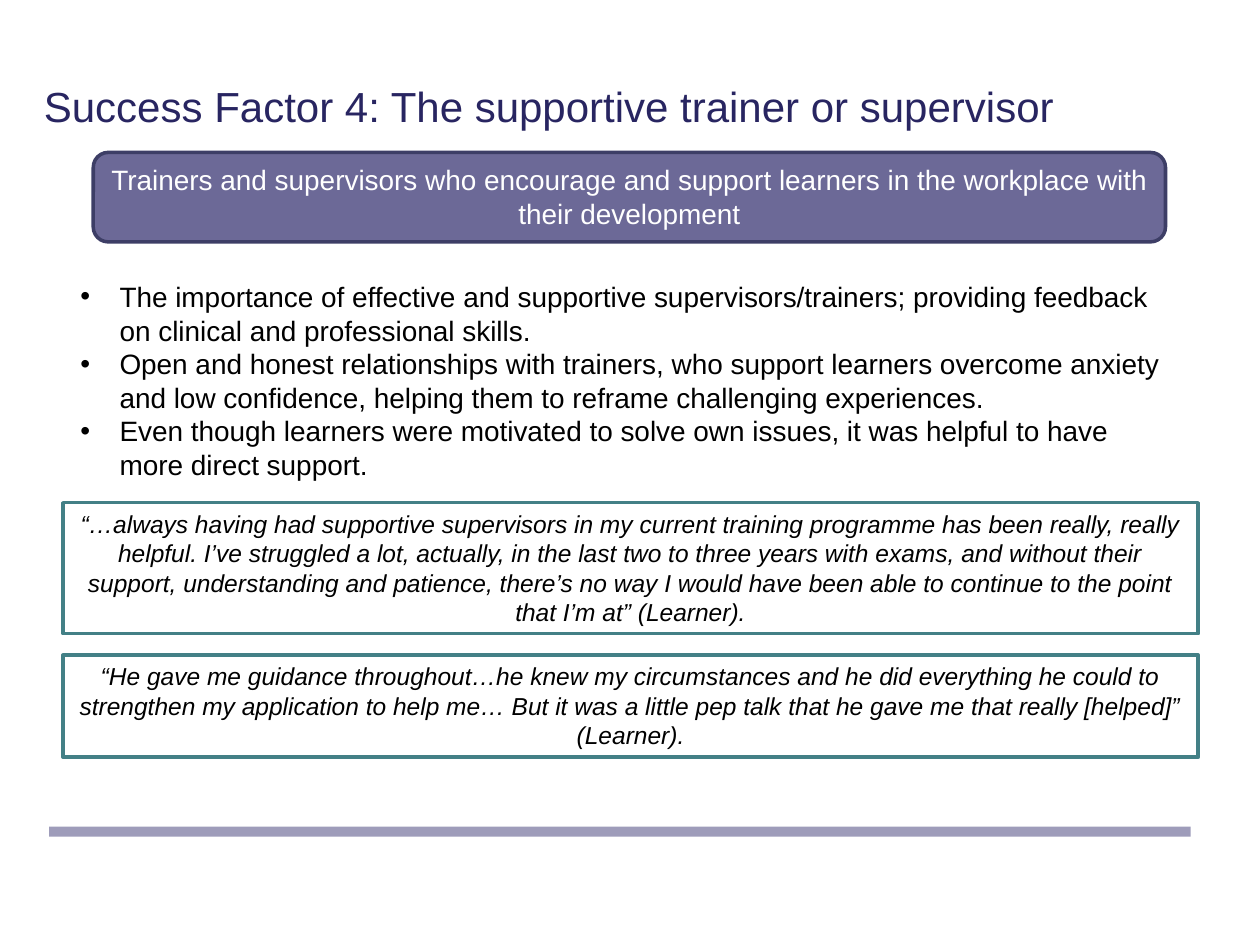
from lxml import etree
from pptx import Presentation
from pptx.dml.color import RGBColor
from pptx.enum.shapes import MSO_SHAPE
from pptx.enum.text import MSO_ANCHOR, PP_ALIGN
from pptx.oxml.ns import qn
from pptx.util import Inches, Pt

RECT, ROUND = MSO_SHAPE.RECTANGLE, MSO_SHAPE.ROUNDED_RECTANGLE
TOP, MIDDLE = MSO_ANCHOR.TOP, MSO_ANCHOR.MIDDLE
LEFT, CENTER = PP_ALIGN.LEFT, PP_ALIGN.CENTER

WHITE = RGBColor(0xFF, 0xFF, 0xFF)
BLACK = RGBColor(0x00, 0x00, 0x00)
NAVY = RGBColor(0x28, 0x25, 0x61)
PURPLE = RGBColor(0x6C, 0x69, 0x97)
DARK = RGBColor(0x3D, 0x3E, 0x66)
LILAC = RGBColor(0x9E, 0x9C, 0xBA)
TEAL = RGBColor(0x43, 0x80, 0x86)

TITLE = "Success Factor 4: The supportive trainer or supervisor"
BANNER = ("Trainers and supervisors who encourage and support learners "
          "in the workplace with their development")
POINTS = [
    "The importance of effective and supportive supervisors/trainers; "
    "providing feedback on clinical and professional skills.",
    "Open and honest relationships with trainers, who support learners overcome "
    "anxiety and low confidence, helping them to reframe challenging experiences.",
    "Even though learners were motivated to solve own issues, it was helpful "
    "to have more direct support.",
]
QUOTES = [
    (3.99, 1.04,
     "“…always having had supportive supervisors in my current training programme "
     "has been really, really helpful. I’ve struggled a lot, actually, in the last "
     "two to three years with exams, and without their support, understanding and "
     "patience, there’s no way I would have been able to continue to the point "
     "that I’m at” (Learner)."),
    (5.2, 0.81,
     "“He gave me guidance throughout…he knew my circumstances and he did everything "
     "he could to strengthen my application to help me… But it was a little pep talk "
     "that he gave me that really [helped]” (Learner)."),
]


def write(shape, lines, size, color, align=LEFT, anchor=TOP, italic=False, bullet=False):
    frame = shape.text_frame
    frame.word_wrap = True
    frame.vertical_anchor = anchor
    frame.text = "\n".join(lines)
    for para in frame.paragraphs:
        para.alignment = align
        if bullet:
            add_bullet(para)
        for run in para.runs:
            font = run.font
            font.name, font.size, font.italic = "Arial", Pt(size), italic
            font.color.rgb = color


def add_bullet(para):
    props = para._p.get_or_add_pPr()
    indent = Inches(0.31)
    props.set("marL", str(indent))
    props.set("indent", str(-indent))
    etree.SubElement(props, qn("a:buFont")).set("typeface", "Arial")
    etree.SubElement(props, qn("a:buChar")).set("char", "•")


def add_panel(slide, kind, box, fill, line=None):
    """Add a flat filled shape, outlined only when a line colour is given."""
    panel = slide.shapes.add_shape(kind, *map(Inches, box))
    panel.shadow.inherit = False
    panel.fill.solid()
    panel.fill.fore_color.rgb = fill
    if line is None:
        panel.line.fill.background()
    else:
        panel.line.color.rgb = line
        panel.line.width = Pt(2)
    return panel


def add_title(slide, box):
    title = slide.shapes.add_textbox(*map(Inches, box))
    write(title, [TITLE], 24, NAVY, anchor=MIDDLE)


def add_banner(slide, box):
    banner = add_panel(slide, ROUND, box, PURPLE, DARK)
    write(banner, [BANNER], 16, WHITE, CENTER)


def add_points(slide, box):
    points = slide.shapes.add_textbox(*map(Inches, box))
    write(points, POINTS, 16, BLACK, bullet=True)


def add_quotes(slide, left, width):
    for top, height, words in QUOTES:
        quote = add_panel(slide, RECT, (left, top, width, height), WHITE, TEAL)
        write(quote, [words], 14, BLACK, CENTER, italic=True)


def main():
    deck = Presentation()
    deck.slide_width, deck.slide_height = Inches(10), Inches(7.5)
    slide = deck.slides.add_slide(deck.slide_layouts[6])
    add_panel(slide, RECT, (0.39, 6.56, 9.06, 0.08), LILAC)
    add_title(slide, (0.25, 0.21, 9.5, 1.25))
    add_banner(slide, (0.74, 1.21, 8.51, 0.71))
    add_points(slide, (0.54, 2.17, 8.92, 1.72))
    add_quotes(slide, 0.5, 9.01)
    deck.save("out.pptx")


if __name__ == "__main__":
    main()
